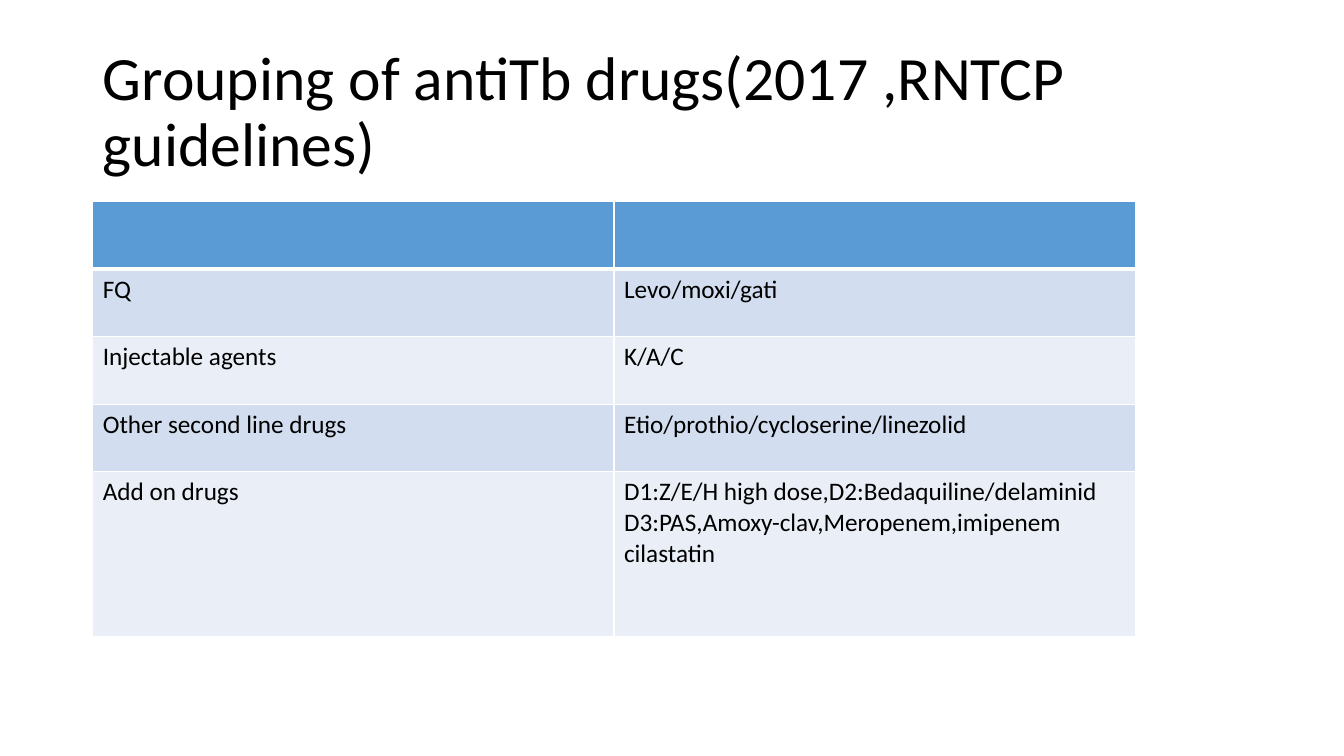
from pptx import Presentation
from pptx.dml.color import RGBColor
from pptx.enum.text import MSO_ANCHOR, MSO_AUTO_SIZE, PP_ALIGN
from pptx.oxml.ns import qn
from pptx.util import Inches, Pt
from lxml.etree import SubElement

TITLE = "Grouping of antiTb drugs(2017 ,RNTCP guidelines)"
ROWS = [
    ([], []),
    (["FQ"], ["Levo/moxi/gati"]),
    (["Injectable agents"], ["K/A/C"]),
    (["Other second line drugs"], ["Etio/prothio/cycloserine/linezolid"]),
    (["Add on drugs"], ["D1:Z/E/H high dose,D2:Bedaquiline/delaminid",
                        "D3:PAS,Amoxy-clav,Meropenem,imipenem cilastatin"]),
]
COLORS = {"text": "000000", "header": "5B9BD5", "odd": "D2DEEF",
          "even": "EAEFF7", "border": "FFFFFF"}
FONT = "Calibri"
COLUMN_WIDTH = 5.17
ROW_HEIGHT, LAST_ROW_HEIGHT = 0.67, 1.64


def write_text(text_frame, lines, size=18, line_spacing=None):
    for index, line in enumerate(lines):
        paragraph = text_frame.paragraphs[0] if index == 0 else text_frame.add_paragraph()
        paragraph.alignment = PP_ALIGN.LEFT
        paragraph.line_spacing = line_spacing
        run = paragraph.add_run()
        run.text = line
        run.font.name = FONT
        run.font.size = Pt(size)
        run.font.color.rgb = RGBColor.from_string(COLORS["text"])


def set_border(cell, side, width):
    line = SubElement(cell._tc.get_or_add_tcPr(), qn(f"a:ln{side}"), w=str(Pt(width)))
    fill = SubElement(line, qn("a:solidFill"))
    SubElement(fill, qn("a:srgbClr"), val=COLORS["border"])


presentation = Presentation()
presentation.slide_width = Inches(13.33)
presentation.slide_height = Inches(7.5)
slide = presentation.slides.add_slide(presentation.slide_layouts[5])

# Title
title = slide.shapes.title
title.left, title.top = Inches(0.92), Inches(0.4)
title.width, title.height = Inches(11.5), Inches(1.45)
title.text_frame.word_wrap = True
title.text_frame.auto_size = MSO_AUTO_SIZE.NONE
title.text_frame.vertical_anchor = MSO_ANCHOR.MIDDLE
write_text(title.text_frame, [TITLE], size=44, line_spacing=0.9)

# Drug table
heights = [ROW_HEIGHT] * (len(ROWS) - 1) + [LAST_ROW_HEIGHT]
table = slide.shapes.add_table(len(ROWS), 2, Inches(0.92), Inches(2),
                               Inches(2 * COLUMN_WIDTH), Inches(sum(heights))).table
for column in table.columns:
    column.width = Inches(COLUMN_WIDTH)
for row_index, (row, height) in enumerate(zip(ROWS, heights)):
    table.rows[row_index].height = Inches(height)
    band = "header" if row_index == 0 else "odd" if row_index % 2 else "even"
    for column_index, lines in enumerate(row):
        cell = table.cell(row_index, column_index)
        write_text(cell.text_frame, lines)
        # The rule under the header is thicker
        for side, width in (("L", 1), ("R", 1), ("T", 3 if row_index == 1 else 1),
                            ("B", 3 if row_index == 0 else 1)):
            set_border(cell, side, width)
        cell.fill.solid()
        cell.fill.fore_color.rgb = RGBColor.from_string(COLORS[band])

presentation.save("out.pptx")
